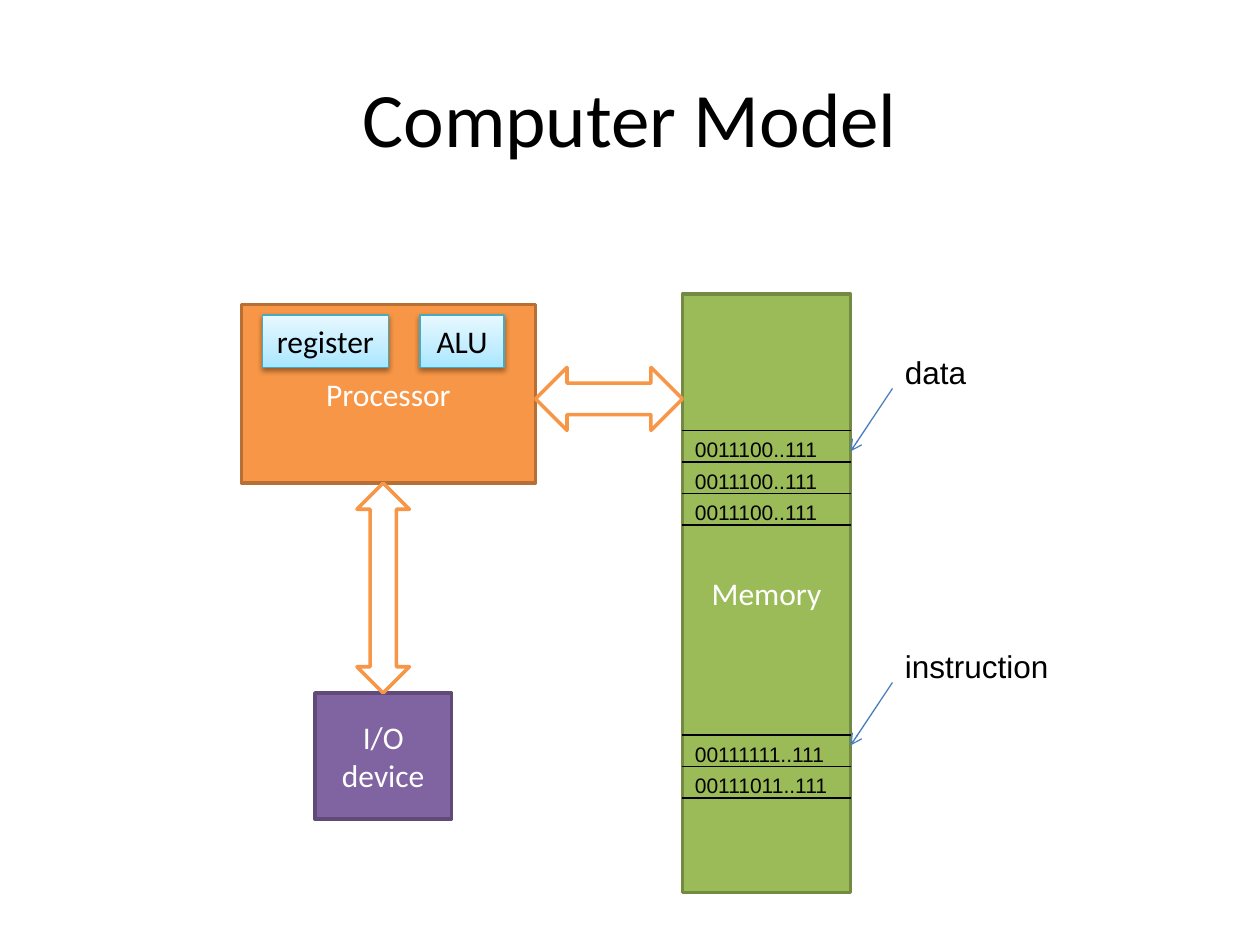
from copy import deepcopy

from lxml.etree import SubElement
from pptx import Presentation
from pptx.dml.color import RGBColor
from pptx.enum.shapes import MSO_CONNECTOR, MSO_SHAPE
from pptx.enum.text import MSO_ANCHOR, MSO_AUTO_SIZE, PP_ALIGN
from pptx.oxml.ns import qn
from pptx.util import Pt

PX = 7620  # EMU per px, 120 px to the inch
COLORS = {
    "black": "000000", "white": "FFFFFF",
    "orange": "F79646", "orange edge": "B76F34",
    "green": "9BBB59", "green edge": "738A42",
    "purple": "8064A2", "purple edge": "5F4A78",
    "pointer": "4B7EBC", "unit edge": "46AAC5",
    "unit bottom": "A7E6FF", "unit middle": "C1EDFF", "unit top": "E7F8FF",
}


def write(shape, text, size=18, font="Calibri", color="white",
          align=PP_ALIGN.CENTER, anchor=MSO_ANCHOR.MIDDLE, wrap=True, grow=False):
    frame = shape.text_frame
    frame.word_wrap = wrap
    frame.vertical_anchor = anchor
    frame.auto_size = MSO_AUTO_SIZE.SHAPE_TO_FIT_TEXT if grow else MSO_AUTO_SIZE.NONE
    paragraph = frame.paragraphs[0]
    paragraph.alignment = align
    run = paragraph.add_run()
    run.text = text
    run.font.size = Pt(size)
    run.font.name = font
    run.font.color.rgb = RGBColor.from_string(COLORS[color])


def draw_line(x1, y1, x2, y2, color="black"):
    line = slide.shapes.add_connector(
        MSO_CONNECTOR.STRAIGHT, x1 * PX, y1 * PX, x2 * PX, y2 * PX)
    line.line.color.rgb = RGBColor.from_string(COLORS[color])
    line.line.width = Pt(0.75)
    SubElement(line._element.spPr, qn("a:effectLst"))
    return line


prs = Presentation()
prs.slide_width, prs.slide_height = 1200 * PX, 900 * PX
slide = prs.slides.add_slide(prs.slide_layouts[5])

title = slide.shapes.title
title.left, title.top, title.width, title.height = [v * PX for v in (60, 36, 1080, 150)]
write(title, "Computer Model", size=44, color="black")

# Main components and the buses between them
components = [
    (MSO_SHAPE.RECTANGLE, (230, 290, 280, 170), "orange", "orange edge", "Processor"),
    (MSO_SHAPE.RECTANGLE, (650, 280, 160, 570), "green", "green edge", "Memory"),
    (MSO_SHAPE.RECTANGLE, (300, 660, 130, 120), "purple", "purple edge", "I/O device"),
    (MSO_SHAPE.LEFT_RIGHT_ARROW, (510, 350, 140, 60), "white", "orange", ""),
    (MSO_SHAPE.UP_DOWN_ARROW, (340, 460, 50, 200), "white", "orange", ""),
]
for preset, box, fill, edge, label in components:
    component = slide.shapes.add_shape(preset, *[v * PX for v in box])
    component.shadow.inherit = False
    component.fill.solid()
    component.fill.fore_color.rgb = RGBColor.from_string(COLORS[fill])
    component.line.color.rgb = RGBColor.from_string(COLORS[edge])
    component.line.width = Pt(2)
    if label:
        write(component, label)

# Units inside the processor
for label, left, width in [("register", 250, 120), ("ALU", 400, 80)]:
    unit = slide.shapes.add_shape(
        MSO_SHAPE.RECTANGLE, left * PX, 300 * PX, width * PX, 50 * PX)
    unit.line.color.rgb = RGBColor.from_string(COLORS["unit edge"])
    unit.line.width = Pt(0.75)

    unit.fill.gradient()
    unit.fill.gradient_angle = 90
    stop_list = unit._element.spPr.find(qn("a:gradFill")).find(qn("a:gsLst"))
    stop_list.insert(1, deepcopy(stop_list[0]))
    shades = [(0, "unit bottom"), (0.35, "unit middle"), (1, "unit top")]
    for stop, (position, shade) in zip(unit.fill.gradient_stops, shades):
        stop.position = position
        stop.color.rgb = RGBColor.from_string(COLORS[shade])

    unit.shadow.inherit = False
    effects = unit._element.spPr.find(qn("a:effectLst"))
    shadow = SubElement(effects, qn("a:outerShdw"), blurRad="40000", dist="20000",
                        dir="5400000", rotWithShape="0")
    shadow_color = SubElement(shadow, qn("a:srgbClr"), val=COLORS["black"])
    SubElement(shadow_color, qn("a:alpha"), val="38000")
    write(unit, label, color="black")

# Memory cells, each block with its label and pointer
ROW = 30
blocks = [
    ("data", 330, 83, 410, ["0011100..111"] * 3),
    ("instruction", 610, 162, 700, ["00111111..111", "00111011..111"]),
]
for name, label_top, label_width, cells_top, words in blocks:
    for row in range(len(words) + 1):
        draw_line(650, cells_top + row * ROW, 810, cells_top + row * ROW)
    for row, word in enumerate(words):
        cell = slide.shapes.add_textbox(
            650 * PX, (cells_top + row * ROW) * PX, 160 * PX, 36 * PX)
        write(cell, word, size=12, font="Arial", color="black",
              align=PP_ALIGN.LEFT, anchor=MSO_ANCHOR.TOP, grow=True)

    pointer = draw_line(850, label_top + 40, 810, label_top + 100, color="pointer")
    SubElement(pointer.line._get_or_add_ln(), qn("a:tailEnd"), type="arrow")
    block_label = slide.shapes.add_textbox(
        850 * PX, label_top * PX, label_width * PX, 48 * PX)
    write(block_label, name, font="Arial", color="black", align=PP_ALIGN.LEFT,
          anchor=MSO_ANCHOR.TOP, wrap=False, grow=True)

prs.save("out.pptx")
